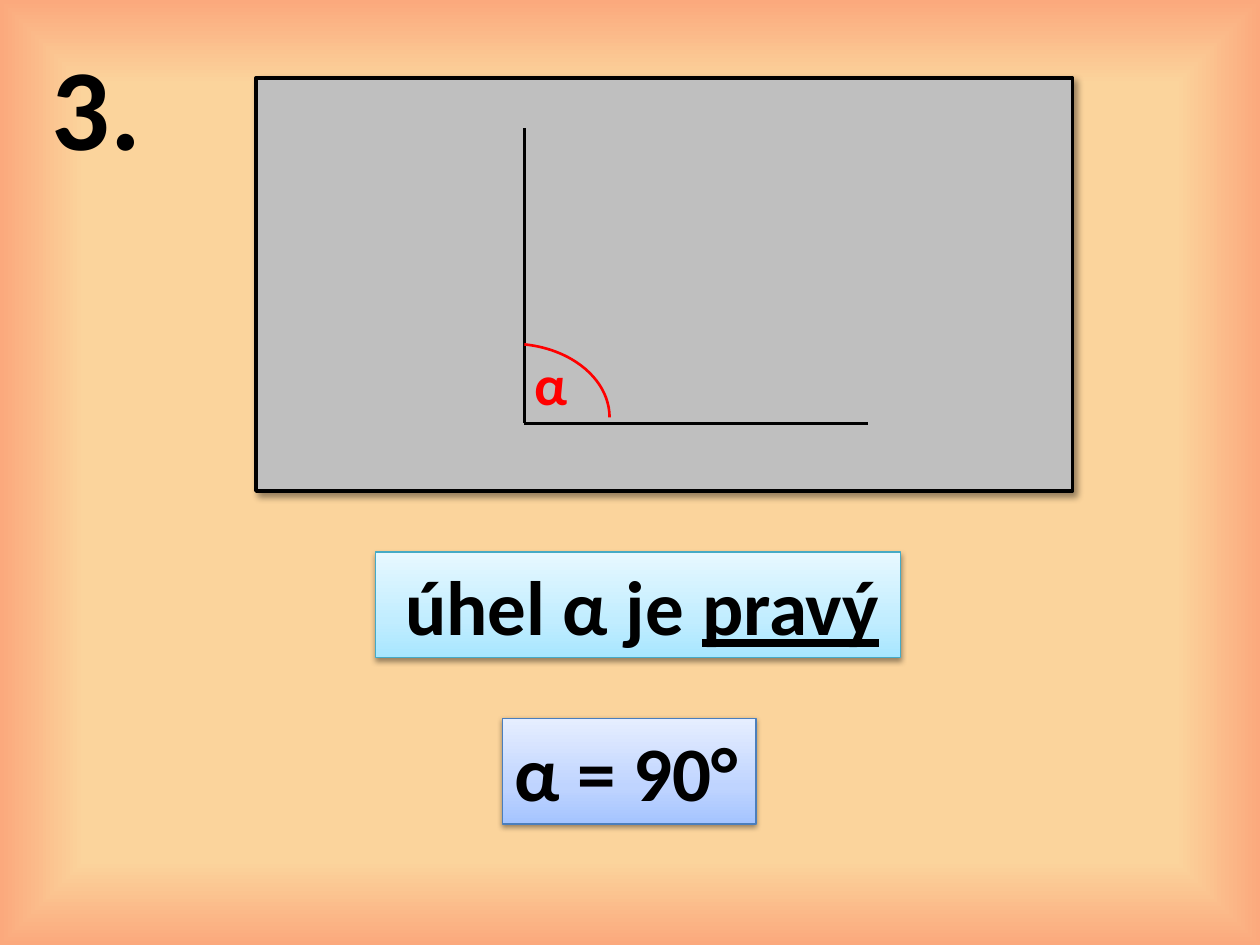
from lxml import etree
from pptx import Presentation
from pptx import util as u
from pptx.dml.color import RGBColor
from pptx.enum import shapes, text
from pptx.oxml.ns import qn

BLACK = RGBColor(0x00, 0x00, 0x00)
RED = RGBColor(0xFF, 0x00, 0x00)
GREY = RGBColor(0xBF, 0xBF, 0xBF)
TEAL = RGBColor(0x46, 0xAA, 0xC5)
BLUE = RGBColor(0x4B, 0x7E, 0xBC)
SAND = RGBColor(0xFB, 0xD4, 0x9C)
CORAL = RGBColor(0xFB, 0xA9, 0x7D)
CYAN_STOPS = [(0, RGBColor(0xA7, 0xE6, 0xFF)), (35, RGBColor(0xC1, 0xED, 0xFF)),
              (100, RGBColor(0xE7, 0xF8, 0xFF))]
BLUE_STOPS = [(0, RGBColor(0xA4, 0xC4, 0xFF)), (35, RGBColor(0xBF, 0xD4, 0xFF)),
              (100, RGBColor(0xE6, 0xEE, 0xFF))]


def add_element(parent, tag, **attributes):
    """Append a DrawingML child and return it."""
    values = {name: str(value) for name, value in attributes.items()}
    return etree.SubElement(parent, qn("a:" + tag), values)


def set_gradient(fill, holder, stops):
    """Give a fill the listed stops and return its emptied gradient element."""
    fill.gradient()
    gradient = holder.find(qn("a:gradFill"))
    for child in list(gradient):
        gradient.remove(child)
    stop_list = add_element(gradient, "gsLst")
    for percent, colour in stops:
        stop = add_element(stop_list, "gs", pos=percent * 1000)
        add_element(stop, "srgbClr", val=colour)
    return gradient


def set_shadow(shape, opacity, blur, distance, angle):
    """Give a shape a black outer shadow."""
    shape.shadow.inherit = False
    effects = shape.element.spPr.find(qn("a:effectLst"))
    shadow = add_element(effects, "outerShdw", blurRad=u.Pt(blur), dist=u.Pt(distance),
                         dir=angle * 60000, rotWithShape=0)
    colour = add_element(shadow, "srgbClr", val=BLACK)
    add_element(colour, "alpha", val=opacity * 1000)


def set_line(shape, colour, width):
    """Set outline colour and width in points."""
    shape.line.color.rgb = colour
    shape.line.width = u.Pt(width)


def write_text(shape, wording, size, colour=BLACK, underlined=""):
    """Write one bold unwrapped line, with an optional underlined ending."""
    frame = shape.text_frame
    frame.word_wrap = False
    frame.auto_size = text.MSO_AUTO_SIZE.SHAPE_TO_FIT_TEXT
    frame.vertical_anchor = text.MSO_ANCHOR.TOP
    para = frame.paragraphs[0]
    para.alignment = text.PP_ALIGN.LEFT
    para.font.name = "Calibri"
    para.font.size = u.Pt(size)
    para.font.bold = True
    para.font.color.rgb = colour
    para.add_run().text = wording
    if underlined:
        span = para.add_run()
        span.text = underlined
        span.font.underline = True


def paint_background(page):
    """Fill the page with sand that turns coral at the edges."""
    fill = page.background.fill
    fill.solid()
    holder = page.element.find(".//" + qn("p:bgPr"))
    gradient = set_gradient(fill, holder, [(0, SAND), (82, SAND), (100, CORAL)])
    path = add_element(gradient, "path", path="rect")
    add_element(path, "fillToRect", l=50000, t=50000, r=50000, b=50000)


def place_number(page, left, top, width, height):
    """Place the exercise number as the page title."""
    title = page.shapes.title
    title.left, title.top = u.Cm(left), u.Cm(top)
    title.width, title.height = u.Cm(width), u.Cm(height)
    write_text(title, "3.", 66)


def draw_angle(page, left, top, width, height):
    """Draw the grey panel with the right angle inside it."""
    def place(x, y):
        return u.Cm(left + x), u.Cm(top + y)

    panel = page.shapes.add_shape(shapes.MSO_SHAPE.RECTANGLE, *place(0, 0),
                                  u.Cm(width), u.Cm(height))
    panel.fill.solid()
    panel.fill.fore_color.rgb = GREY
    set_line(panel, BLACK, 2)
    set_shadow(panel, 40, 4, 3, 45)

    vertex = place(5.41, 6.96)
    for end in (place(5.41, 1.02), place(12.34, 6.96)):
        ray = page.shapes.add_connector(shapes.MSO_CONNECTOR.STRAIGHT, *end, *vertex)
        set_line(ray, BLACK, 1.75)
        add_element(ray.element.spPr, "effectLst")

    label = page.shapes.add_textbox(*place(5.36, 5.36), u.Cm(1.24), u.Cm(1.63))
    write_text(label, "α", 32, RED)

    arc = page.shapes.add_shape(shapes.MSO_SHAPE.ARC, *place(3.17, 5.36),
                                u.Cm(3.96), u.Cm(2.97))
    arc.adjustments[0] = 168.05
    arc.adjustments[1] = 0
    arc.fill.background()
    set_line(arc, RED, 1.5)
    arc.shadow.inherit = False


def place_answer(page, left, top, width, height, stops, outline, wording, underlined=""):
    """Place a shaded answer box with its text."""
    box = page.shapes.add_shape(shapes.MSO_SHAPE.RECTANGLE, u.Cm(left), u.Cm(top),
                                u.Cm(width), u.Cm(height))
    gradient = set_gradient(box.fill, box.element.spPr, stops)
    add_element(gradient, "lin", ang=270 * 60000, scaled=1)
    set_line(box, outline, 0.75)
    set_shadow(box, 38, 3.1, 1.6, 90)
    write_text(box, wording, 44, underlined=underlined)


def main():
    """Build and save the deck."""
    deck = Presentation()
    deck.slide_width, deck.slide_height = u.Cm(25.4), u.Cm(19.05)
    page = deck.slides.add_slide(deck.slide_layouts.get_by_name("Title Only"))
    paint_background(page)
    place_number(page, 0.79, 0.58, 2.34, 3.07)
    draw_angle(page, 5.16, 1.57, 16.46, 8.33)
    place_answer(page, 7.57, 11.13, 10.59, 2.13, CYAN_STOPS, TEAL, " úhel α je ", "pravý")
    place_answer(page, 10.13, 14.48, 5.11, 2.13, BLUE_STOPS, BLUE, "α = 90°")
    deck.save("out.pptx")


if __name__ == "__main__":
    main()
